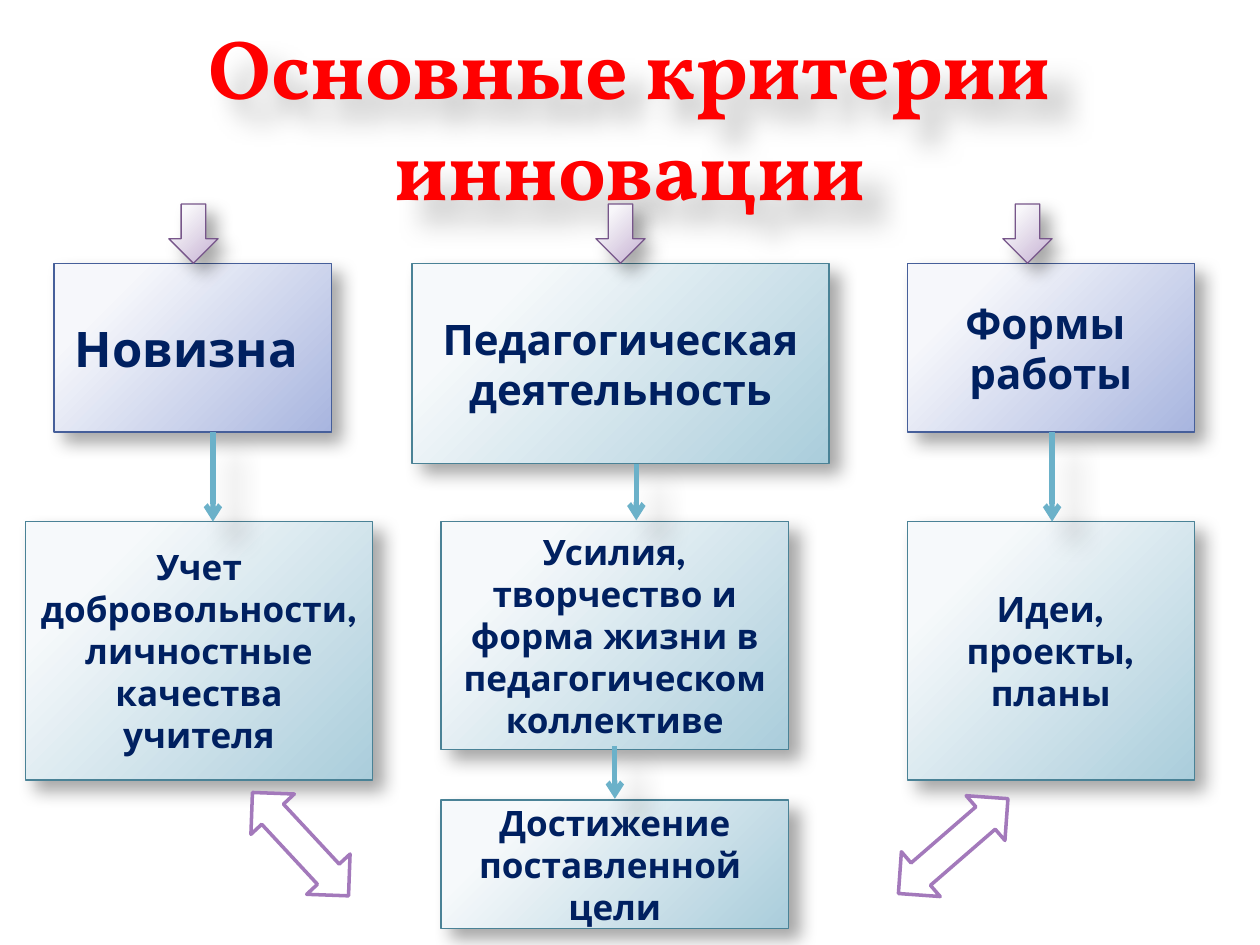
"""Build a slide on the main criteria of innovation."""
import dataclasses
import typing

import lxml.etree
import pptx
import pptx.dml.color
import pptx.enum.shapes
import pptx.enum.text
import pptx.oxml.ns
import pptx.util

SCALE = 9144
KIND = pptx.enum.shapes.MSO_SHAPE
qn = pptx.oxml.ns.qn


class Tone(typing.NamedTuple):
    light: str
    dark: str
    edge: str


class Shade(typing.NamedTuple):
    alpha: int
    blur: float
    dist: int


@dataclasses.dataclass(frozen=True)
class Theme:
    blue: Tone = Tone("F6F7FB", "A8B5DF", "465F9A")
    teal: Tone = Tone("F6F9FB", "AACDDB", "4A8296")
    plum: Tone = Tone("F8F7FA", "C5B0D2", "77568A")
    title: str = "FF0000"
    ink: str = "002060"
    link: str = "6BB1C9"
    plain: str = "FFFFFF"
    rim: str = "A379BB"
    near: Shade = Shade(35, 10.2, 8)
    far: Shade = Shade(26, 15, 18)
    head: str = "Vollkorn"
    body: str = "League Spartan"
    huge: int = 48
    large: int = 28
    mid: int = 24
    small: int = 20


THEME = Theme()


class Card(typing.NamedTuple):
    left: int
    top: int
    width: int
    height: int
    text: str
    size: int
    tone: Tone = THEME.teal


class Link(typing.NamedTuple):
    x: int
    top: int
    end: int


class Turn(typing.NamedTuple):
    left: int
    top: int
    width: int
    height: int
    angle: float


CARDS = (
    Card(43, 209, 220, 134, "Новизна ", THEME.large, THEME.blue),
    Card(327, 209, 331, 159, "Педагогическая деятельность", THEME.mid),
    Card(720, 209, 228, 134, "Формы \nработы", THEME.mid, THEME.blue),
    Card(20, 414, 276, 205, "Учет добровольности, личностные качества учителя", THEME.small),
    Card(350, 414, 276, 181, "Усилия, творчество и форма жизни в педагогическом коллективе", THEME.small),
    Card(720, 414, 228, 205, "Идеи, проекты, планы", THEME.small),
    Card(350, 635, 276, 102, "Достижение поставленной \nцели", THEME.small),
)
LINKS = (Link(835, 343, 414), Link(505, 368, 413), Link(169, 343, 414), Link(488, 592, 634))
TURNS = (Turn(733, 614, 47, 115, 49.1), Turn(215, 614, 47, 112, 317.1))
DROPS = (134, 473, 796)


def px(num: int) -> int:
    return pptx.util.Emu(num * SCALE)


def rgb(code: str):
    return pptx.dml.color.RGBColor.from_string(code)


def node(root, tag: str, **attrs):
    return lxml.etree.SubElement(root, qn(tag), {key: str(val) for key, val in attrs.items()})


def cast(item, shade: Shade) -> None:
    props = item._element.spPr
    group = props.find(qn("a:effectLst"))
    if group is None:
        group = node(props, "a:effectLst")
    glow = node(group, "a:outerShdw", blurRad=int(pptx.util.Pt(shade.blur)),
                dist=int(pptx.util.Pt(shade.dist)), dir=45 * 60000,
                algn="tl", rotWithShape=0)
    node(node(glow, "a:srgbClr", val="000000"), "a:alpha", val=shade.alpha * 1000)


def blend(shape, tone: Tone) -> None:
    shape.fill.gradient()
    for stop, code, place in zip(shape.fill.gradient_stops, tone[:2], (0.2, 1)):
        stop.color.rgb = rgb(code)
        stop.position = place
    grad = shape._element.spPr.find(qn("a:gradFill"))
    grad.remove(grad.find(qn("a:lin")))
    route = node(grad, "a:path", path="circle")
    node(route, "a:fillToRect", l=-15000, t=-15000, r=115000, b=115000)


def stroke(item, code: str, width: float) -> None:
    item.line.color.rgb = rgb(code)
    item.line.width = pptx.util.Pt(width)


def write(shape, text: str, *, size: int, font: str, color: str) -> None:
    frame = shape.text_frame
    frame.word_wrap = True
    frame.vertical_anchor = pptx.enum.text.MSO_ANCHOR.MIDDLE
    frame.text = text
    for para in frame.paragraphs:
        para.alignment = pptx.enum.text.PP_ALIGN.CENTER
        for run in para.runs:
            run.font.size = pptx.util.Pt(size)
            run.font.name = font
            run.font.bold = True
            run.font.color.rgb = rgb(color)


def form(slide, kind, *box: int):
    shape = slide.shapes.add_shape(kind, *map(px, box))
    shape.shadow.inherit = False
    return shape


def block(slide, kind, tone: Tone, *box: int):
    shape = form(slide, kind, *box)
    blend(shape, tone)
    stroke(shape, tone.edge, 0.75)
    cast(shape, THEME.near)
    return shape


def draw_card(slide, card: Card) -> None:
    shape = block(slide, KIND.RECTANGLE, card.tone, *card[:4])
    write(shape, card.text, size=card.size, font=THEME.body, color=THEME.ink)


def draw_link(slide, link: Link) -> None:
    line = slide.shapes.add_connector(
        pptx.enum.shapes.MSO_CONNECTOR.STRAIGHT,
        px(link.x), px(link.top), px(link.x), px(link.end))
    stroke(line, THEME.link, 3)
    node(line._element.spPr.find(qn("a:ln")), "a:tailEnd", type="arrow")
    cast(line, THEME.far)


def draw_turn(slide, turn: Turn) -> None:
    shape = form(slide, KIND.UP_DOWN_ARROW, *turn[:4])
    shape.rotation = turn.angle
    shape.fill.solid()
    shape.fill.fore_color.rgb = rgb(THEME.plain)
    stroke(shape, THEME.rim, 2)


def main() -> None:
    deck = pptx.Presentation()
    deck.slide_width, deck.slide_height = px(1000), px(750)
    slide = deck.slides.add_slide(deck.slide_layouts[6])
    title = slide.shapes.add_textbox(*map(px, (50, 30, 900, 125)))
    write(title, "Основные критерии инновации",
          size=THEME.huge, font=THEME.head, color=THEME.title)
    cast(title, THEME.far)
    for card in CARDS:
        draw_card(slide, card)
    for link in LINKS:
        draw_link(slide, link)
    for turn in TURNS:
        draw_turn(slide, turn)
    for left in DROPS:
        block(slide, KIND.DOWN_ARROW, THEME.plum, left, 162, 39, 47)
    deck.save("out.pptx")


if __name__ == "__main__":
    main()
